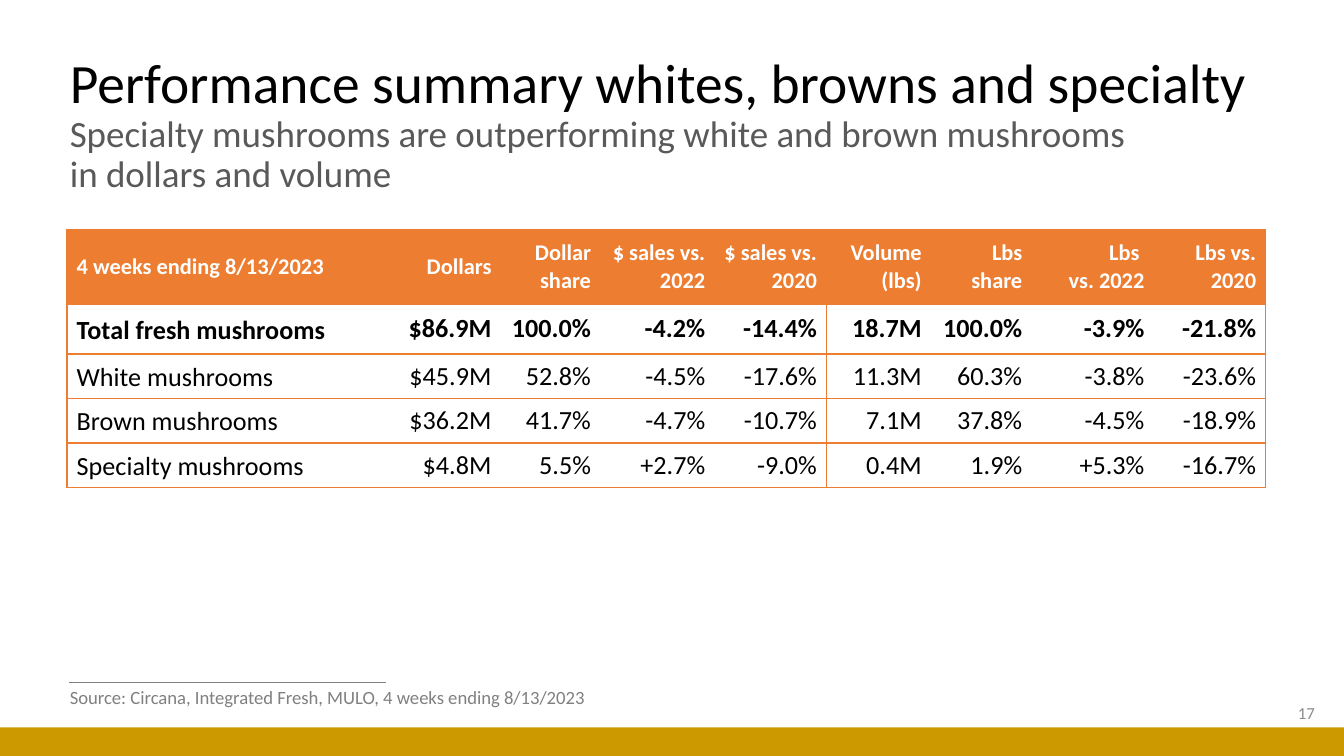
from dataclasses import dataclass

from lxml.etree import SubElement
from pptx import Presentation
from pptx.dml.color import RGBColor
from pptx.enum.shapes import MSO_CONNECTOR, MSO_SHAPE
from pptx.enum.text import MSO_ANCHOR, PP_ALIGN
from pptx.oxml.ns import qn
from pptx.slide import Slide
from pptx.table import _Cell
from pptx.util import Cm, Pt

FONT = "Calibri"
ORANGE, GOLD, GREY = "ED7D31", "CC9900", "808080"
COLUMN_WIDTHS = [6.02, 2.18, 1.88, 2.16, 2.11, 1.98, 1.9, 2.31, 2.11]
ROW_HEIGHTS = [1.4, 0.95, 0.84, 0.84, 0.84]
GROUP_ENDS = {4, 8}
ROWS = [
    ["4 weeks ending 8/13/2023", "Dollars", "Dollar share", "$ sales vs. 2022", "$ sales vs. 2020",
     "Volume (lbs)", "Lbs\nshare", "Lbs \vvs. 2022", "Lbs vs. 2020"],
    ["Total fresh mushrooms", "$86.9M", "100.0%", "-4.2%", "-14.4%", "18.7M", "100.0%", "-3.9%", "-21.8%"],
    ["White mushrooms", "$45.9M", "52.8%", "-4.5%", "-17.6%", "11.3M", "60.3%", "-3.8%", "-23.6%"],
    ["Brown mushrooms", "$36.2M", "41.7%", "-4.7%", "-10.7%", "7.1M", "37.8%", "-4.5%", "-18.9%"],
    ["Specialty mushrooms", "$4.8M", "5.5%", "+2.7%", "-9.0%", "0.4M", "1.9%", "+5.3%", "-16.7%"],
]


@dataclass
class RunStyle:
    size: float
    color: str
    bold: bool = False


@dataclass
class TextBlock:
    text: str
    left: float
    top: float
    width: float
    height: float
    styles: list[RunStyle]
    align: PP_ALIGN = PP_ALIGN.LEFT
    anchor: MSO_ANCHOR = MSO_ANCHOR.MIDDLE
    line_spacing: float = 1.0
    wrap: bool = True


TITLE = TextBlock(
    "Performance summary whites, browns and specialty\v"
    "Specialty mushrooms are outperforming white and brown mushrooms \vin dollars and volume",
    1.07, 1.37, 23.8, 2.01,
    [RunStyle(29.7, "000000"), RunStyle(19.8, "595959"), RunStyle(19.8, "595959")],
    line_spacing=0.9)
PAGE_NUMBER = TextBlock("17", 19.38, 13.08, 5.72, 0.76, [RunStyle(9, "8C8C8C")], PP_ALIGN.RIGHT)
SOURCE = TextBlock("Source: Circana, Integrated Fresh, MULO, 4 weeks ending 8/13/2023",
                   1.07, 12.83, 10.49, 0.69, [RunStyle(10, GREY)],
                   anchor=MSO_ANCHOR.TOP, wrap=False)


def rgb(color: str) -> RGBColor:
    """Turn a hex string into a colour."""
    return RGBColor.from_string(color)


def format_run(run, style: RunStyle) -> None:
    """Apply font, size, weight and colour to a run."""
    run.font.name = FONT
    run.font.size = Pt(style.size)
    run.font.bold = style.bold
    run.font.color.rgb = rgb(style.color)


def add_text(slide: Slide, block: TextBlock) -> None:
    """Add a text box with one style per run."""
    shape = slide.shapes.add_textbox(Cm(block.left), Cm(block.top), Cm(block.width), Cm(block.height))
    text_frame = shape.text_frame
    text_frame.word_wrap = block.wrap
    text_frame.vertical_anchor = block.anchor
    paragraph = text_frame.paragraphs[0]
    paragraph.text = block.text
    paragraph.alignment = block.align
    paragraph.line_spacing = block.line_spacing
    for run, style in zip(paragraph.runs, block.styles):
        format_run(run, style)


def set_borders(cell: _Cell, sides: str) -> None:
    """Draw the named sides in orange and clear the others."""
    properties = cell._tc.get_or_add_tcPr()
    for side in "LRTB":
        line = SubElement(properties, qn(f"a:ln{side}"), w=str(Pt(1)))
        if side in sides:
            fill = SubElement(line, qn("a:solidFill"))
            SubElement(fill, qn("a:srgbClr"), val=ORANGE)
        else:
            SubElement(line, qn("a:noFill"))


def fill_cell(cell: _Cell, text: str, row: int, column: int) -> None:
    """Write and format one table cell."""
    is_header = row == 0
    style = RunStyle(12, "FFFFFF", True) if is_header else RunStyle(14, "000000", row == 1)
    cell.text_frame.text = text
    cell.vertical_anchor = MSO_ANCHOR.MIDDLE
    cell.margin_left = cell.margin_right = Cm(0.18)
    cell.margin_top = cell.margin_bottom = Cm(0)
    for paragraph in cell.text_frame.paragraphs:
        paragraph.alignment = PP_ALIGN.RIGHT if column else PP_ALIGN.LEFT
        if not is_header and column == 0:
            paragraph.line_spacing = 1.07
        for run in paragraph.runs:
            format_run(run, style)
    starts_group = column == 0 or column - 1 in GROUP_ENDS
    set_borders(cell, "TB" + "L" * starts_group + "R" * (column in GROUP_ENDS))
    if is_header:
        cell.fill.solid()
        cell.fill.fore_color.rgb = rgb(ORANGE)
    else:
        cell.fill.background()


def add_performance_table(slide: Slide) -> None:
    """Add the table of dollar and volume results."""
    table = slide.shapes.add_table(
        len(ROWS), len(COLUMN_WIDTHS), Cm(1.27), Cm(4.34),
        Cm(sum(COLUMN_WIDTHS)), Cm(sum(ROW_HEIGHTS))).table
    table.horz_banding = False
    for column, width in zip(table.columns, COLUMN_WIDTHS):
        column.width = Cm(width)
    for row, height in zip(table.rows, ROW_HEIGHTS):
        row.height = Cm(height)
    for row_index, texts in enumerate(ROWS):
        for column_index, text in enumerate(texts):
            fill_cell(table.cell(row_index, column_index), text, row_index, column_index)


def add_footer(slide: Slide) -> None:
    """Add the source rule and the gold band."""
    rule = slide.shapes.add_connector(MSO_CONNECTOR.STRAIGHT, Cm(1.3), Cm(12.9), Cm(7.29), Cm(12.9))
    rule.line.color.rgb = rgb(GREY)
    rule.line.width = Pt(0.5)
    SubElement(rule._element.spPr, qn("a:effectLst"))
    band = slide.shapes.add_shape(MSO_SHAPE.RECTANGLE, Cm(0), Cm(13.74), Cm(25.4), Cm(0.54))
    band.shadow.inherit = False
    band.fill.solid()
    band.fill.fore_color.rgb = rgb(GOLD)
    band.line.fill.background()


def main() -> None:
    """Build the slide and save it."""
    presentation = Presentation()
    presentation.slide_width, presentation.slide_height = Cm(25.4), Cm(14.28)
    slide = presentation.slides.add_slide(presentation.slide_layouts[6])
    add_footer(slide)
    for block in (TITLE, PAGE_NUMBER, SOURCE):
        add_text(slide, block)
    add_performance_table(slide)
    presentation.save("out.pptx")


if __name__ == "__main__":
    main()
